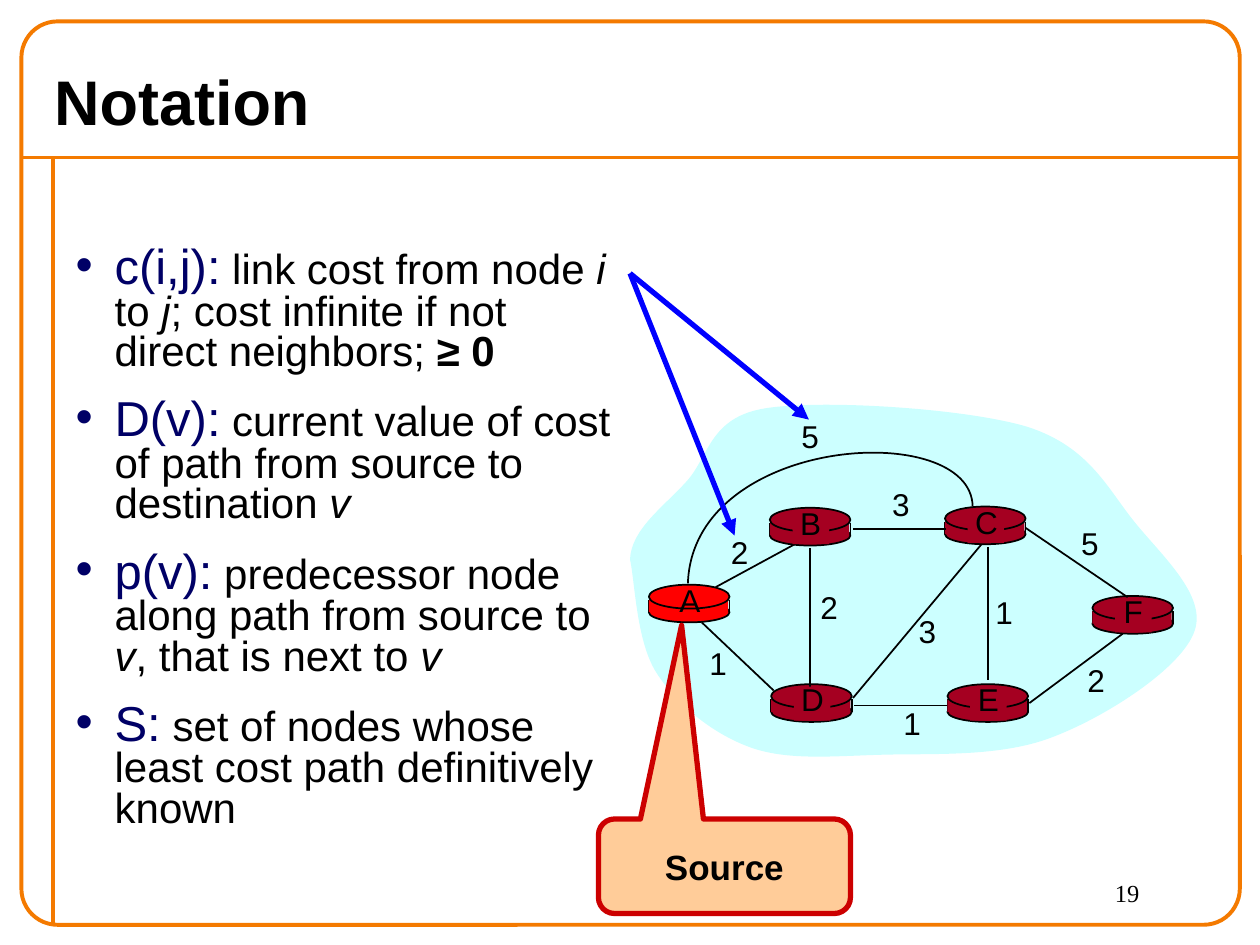
import pptx
import pptx.util
import pptx.dml.color
import pptx.enum.shapes
import pptx.enum.text
import pptx.oxml

Inches, Pt = pptx.util.Inches, pptx.util.Pt
SHAPE = pptx.enum.shapes.MSO_SHAPE
ALIGN = pptx.enum.text.PP_ALIGN
ANCHOR = pptx.enum.text.MSO_ANCHOR
FIT = pptx.enum.text.MSO_AUTO_SIZE
DRAWING = 'xmlns:a="http://schemas.openxmlformats.org/drawingml/2006/main"'

COLOURS = {"frame": "F47A00", "ink": "000000", "term": "000066", "cloud": "CCFFFF",
           "source": "FF0000", "router": "A50021", "pointer": "0000FF",
           "callout": "FFCC99", "callout edge": "CC0000"}

# Content: each definition is a term and its (text, style) pieces
DEFINITIONS = [
    ("c(i,j):", [(" link cost from node ", ""), ("i", "italic"), (" to ", ""), ("j", "italic"),
                 ("; cost infinite if not direct neighbors; ", ""), ("≥ 0", "bold")]),
    ("D(v):", [(" current value of cost of path from source to destination ", ""),
               ("v", "italic")]),
    ("p(v):", [(" predecessor node along path from source to ", ""), ("v", "italic"),
               (", that is next to ", ""), ("v", "italic")]),
    ("S:", [(" set of nodes whose least cost path definitively known", "")]),
]
# Left edge and mid height of each router
ROUTERS = {"A": (5.15, 4.76), "D": (6.12, 5.55), "B": (6.11, 4.15),
           "C": (7.5, 4.14), "E": (7.52, 5.55), "F": (8.67, 4.85)}
# Link ends, then the left and top of the cost label and the cost
LINKS = [
    ((5.68, 4.66), (6.38, 4.28), (5.7, 4.18), "2"),
    ((6.43, 4.35), (6.43, 5.45), (6.41, 4.62), "2"),
    ((6.14, 5.48), (5.57, 4.94), (5.53, 5.06), "1"),
    ((6.77, 5.54), (7.79, 4.32), (7.19, 4.81), "3"),
    ((7.52, 5.6), (6.78, 5.6), (7.07, 5.54), "1"),
    ((7.84, 4.34), (7.84, 5.4), (7.8, 4.66), "1"),
    ((8.17, 5.58), (8.91, 5.03), (8.53, 5.2), "2"),
    ((8.95, 4.74), (8.14, 4.19), (8.48, 4.11), "5"),
    ((7.51, 4.2), (6.77, 4.2), (6.98, 3.8), "3"),
]
ARC = [(7.72, 4.02), (7.71, 3.32), (5.5, 3.45), (5.46, 4.63)]
ARC_COST = ((6.26, 3.26), "5")
# Bezier control points: a start, then three for each curve
CLOUD = [(5, 4.44), (5.01, 4.2), (5.27, 4.02), (5.45, 3.82), (5.63, 3.62), (5.63, 3.31),
         (6.08, 3.24), (6.53, 3.17), (7.67, 3.24), (8.16, 3.39), (8.65, 3.55), (8.79, 3.88),
         (9.01, 4.15), (9.23, 4.42), (9.58, 4.73), (9.48, 5.01), (9.38, 5.3), (8.79, 5.68),
         (8.38, 5.84), (7.97, 6.01), (7.43, 5.98), (7.02, 5.99), (6.62, 6), (6.25, 6.04),
         (5.95, 5.93), (5.65, 5.82), (5.37, 5.59), (5.21, 5.34), (5.05, 5.09), (5.04, 4.62),
         (5, 4.44)]
POINTER_START, POINTER_ENDS = (5, 2.17), [(6.42, 3.33), (5.83, 4.25)]

deck = pptx.Presentation()
deck.slide_width, deck.slide_height = Inches(10), Inches(7.5)
slide = deck.slides.add_slide(deck.slide_layouts[1])
shapes = slide.shapes


def rgb(name):
    return pptx.dml.color.RGBColor.from_string(COLOURS[name])


def place(part, left, top, width, height):
    part.left, part.top, part.width, part.height = map(Inches, (left, top, width, height))


def paint(part, fill=None, line=None, weight=1):
    part.shadow.inherit = False
    if fill:
        part.fill.solid()
        part.fill.fore_color.rgb = rgb(fill)
    else:
        part.fill.background()
    if line:
        part.line.color.rgb = rgb(line)
        part.line.width = Pt(weight)
    else:
        part.line.fill.background()
    return part


def add_part(kind, box, fill=None, line=None, weight=1):
    return paint(shapes.add_shape(kind, *map(Inches, box)), fill, line, weight)


def add_line(start, end, colour="ink", weight=1, arrow=False):
    line = shapes.add_connector(pptx.enum.shapes.MSO_CONNECTOR.STRAIGHT,
                                *map(Inches, start + end))
    line.line.color.rgb = rgb(colour)
    line.line.width = Pt(weight)
    if arrow:
        line.line._get_or_add_ln().append(
            pptx.oxml.parse_xml(f'<a:tailEnd {DRAWING} type="triangle"/>'))
    line._element.spPr.append(pptx.oxml.parse_xml(f"<a:effectLst {DRAWING}/>"))


def add_curve(controls, closed, fill=None, line=None):
    points = [(Inches(x), Inches(y)) for x, y in controls]
    builder = shapes.build_freeform(*points[0])
    builder.add_line_segments(points[1:], close=closed)
    curve = paint(builder.convert_to_shape(), fill, line)
    # Join every three straight segments into one Bezier curve
    segments = curve._element.xpath(".//a:lnTo")
    for first in range(0, len(segments), 3):
        bezier = pptx.oxml.parse_xml(f"<a:cubicBezTo {DRAWING}/>")
        segments[first].addprevious(bezier)
        for segment in segments[first:first + 3]:
            bezier.append(segment[0])
            segment.getparent().remove(segment)


def style(font, size, name="Arial", colour="ink", bold=None):
    font.size, font.name, font.bold = Pt(size), name, bold
    font.color.rgb = rgb(colour)


def add_label(text, left, top, width=0.34, height=0.4, size=18, name="Arial",
              align=ALIGN.CENTER, wrap=False):
    label = shapes.add_textbox(*map(Inches, (left, top, width, height)))
    label.text_frame.word_wrap = wrap
    paragraph = label.text_frame.paragraphs[0]
    paragraph.text, paragraph.alignment = text, align
    style(paragraph.font, size, name)


def add_router(name, left, middle):
    fill = "source" if name == "A" else "router"
    add_part(SHAPE.OVAL, (left, middle + 0.02, 0.64, 0.16), fill, "ink")
    for side in (left, left + 0.64):
        add_line((side, middle), (side, middle + 0.1))
    add_part(SHAPE.RECTANGLE, (left, middle, 0.63, 0.1), fill)
    add_part(SHAPE.OVAL, (left, middle - 0.12, 0.64, 0.19), fill, "ink")


# Frame and rules
add_line((0.17, 1.25), (9.83, 1.25), "frame", 2.25)
add_line((0.42, 1.25), (0.42, 7.33), "frame", 2.25)
frame = add_part(SHAPE.ROUNDED_RECTANGLE, (0.17, 0.17, 9.67, 7.17), None, "frame", 2.25)
frame.adjustments[0] = 0.04
add_label("19", 8.75, 6.92, 1, 0.42, 14, "Times New Roman", ALIGN.LEFT, True)

# Title
title = shapes.title
place(title, 0.33, 0.42, 9.5, 0.75)
title.text_frame.text = "Notation"
title.text_frame.vertical_anchor = ANCHOR.MIDDLE
title.text_frame.auto_size = FIT.NONE
title.text_frame.paragraphs[0].alignment = ALIGN.LEFT
style(title.text_frame.paragraphs[0].font, 36, bold=True)

# Definitions
body = slide.placeholders[1]
place(body, 0.5, 1.25, 4.53, 6)
definitions = body.text_frame
definitions.auto_size = FIT.NONE
definitions.margin_top = Inches(0.71)
for index, (term, pieces) in enumerate(DEFINITIONS):
    paragraph = definitions.add_paragraph() if index else definitions.paragraphs[0]
    paragraph.line_spacing = 0.8
    paragraph.space_before = Pt(14 if index else 0)
    indent = paragraph._p.get_or_add_pPr()
    indent.set("marL", str(Inches(0.31)))
    indent.set("indent", str(-Inches(0.31)))
    head = paragraph.add_run()
    head.text = term
    style(head.font, 28, colour="term")
    for text, emphasis in pieces:
        run = paragraph.add_run()
        run.text = text
        style(run.font, 24, bold=emphasis == "bold")
        run.font.italic = emphasis == "italic"

# Network: cloud, routers, links, names and costs
add_curve(CLOUD, True, fill="cloud")
for name, (left, middle) in ROUTERS.items():
    add_router(name, left, middle)
for start, end, _, _ in LINKS:
    add_line(start, end)
add_curve(ARC, False, line="ink")
for name, (left, middle) in ROUTERS.items():
    if name != "A":
        add_part(SHAPE.RECTANGLE, (left + 0.18, middle - 0.1, 0.29, 0.27), "router")
    add_label(name, left + 0.14, middle - 0.2, 0.37)
for place_of_cost, cost in [link[2:] for link in LINKS] + [ARC_COST]:
    add_label(cost, *place_of_cost)

# Pointers from the cost definition, and the source callout
for end in POINTER_ENDS:
    add_line(POINTER_START, end, "pointer", 3, arrow=True)
source = add_part(SHAPE.ROUNDED_RECTANGULAR_CALLOUT, (4.75, 6.5, 2, 0.75),
                  "callout", "callout edge", 3)
for index, value in enumerate((-0.17, -2.55, 0.17)):
    source.adjustments[index] = value
source.text_frame.word_wrap = False
source.text_frame.vertical_anchor = ANCHOR.MIDDLE
source.text_frame.text = "Source"
source.text_frame.paragraphs[0].alignment = ALIGN.CENTER
style(source.text_frame.paragraphs[0].font, 20, bold=True)

deck.save("out.pptx")
